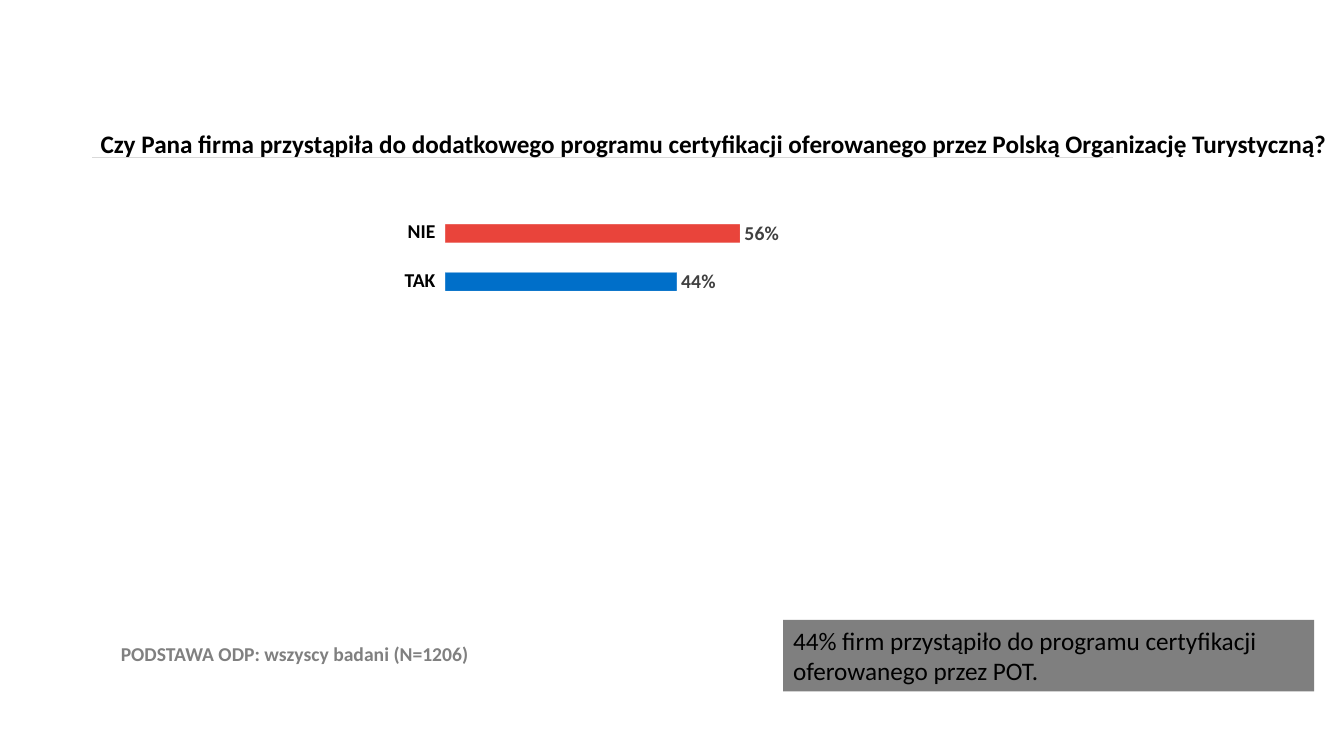
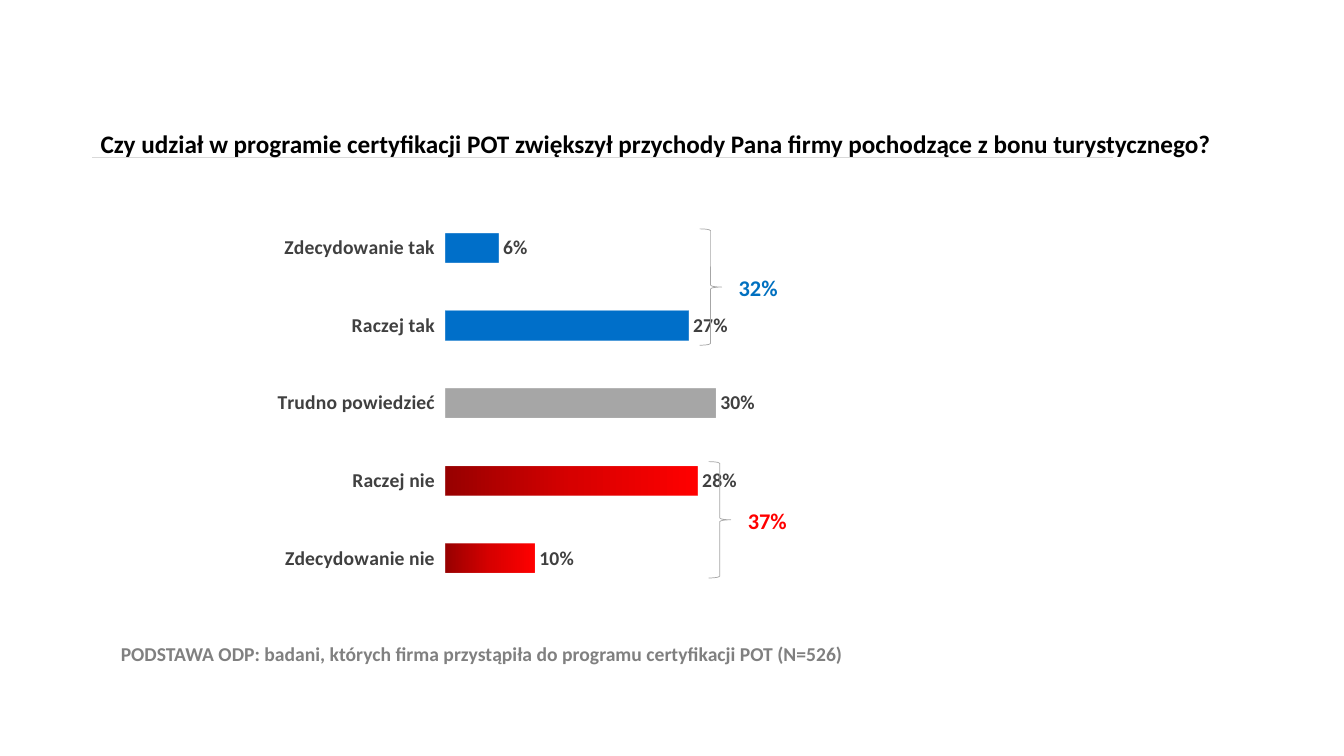
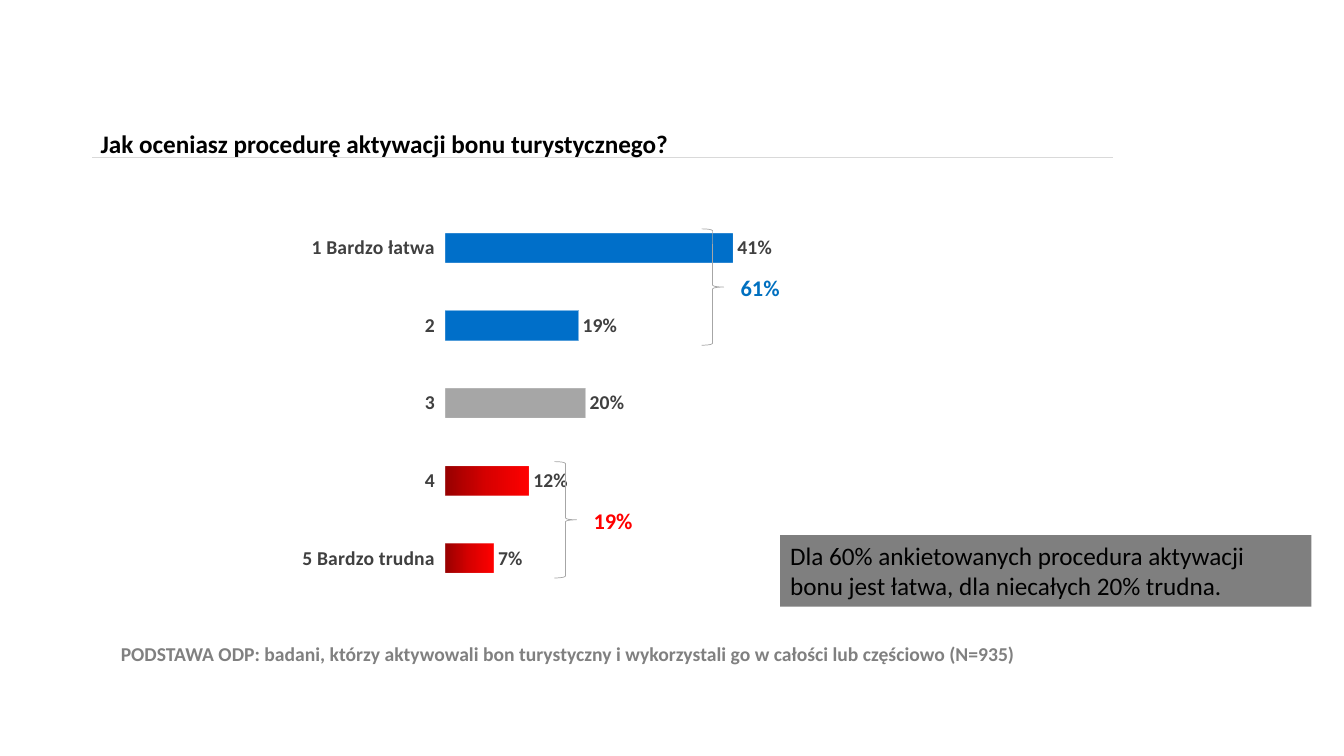
from copy import deepcopy

from lxml import etree
from pptx import Presentation
from pptx.chart.data import CategoryChartData
from pptx.dml.color import RGBColor
from pptx.enum import chart as ch, shapes, text
from pptx.oxml.ns import qn
from pptx.util import Pt

FONT = "Calibri"
C = {
    "black": "000000", "white": "FFFFFF", "label": "404040", "base": "808080",
    "note": "7F7F7F", "rule": "D9D9D9", "brace": "A6A6A6", "neutral": "A6A6A6",
    "bar_blue": "006FC9", "bar_red": "E9443B", "yes": "0070C0", "no": "FF0000",
    "deep_red": "970000", "mid_red": "D70000",
}
RED_GRADIENT = [(0, "deep_red"), (0.5, "mid_red"), (1, "no")]
SCALE_FILLS = [RED_GRADIENT, RED_GRADIENT, "neutral", "bar_blue", "bar_blue"]

CHART_BOX = (9.4, 123.1, 587.5, 310.3)
PLOT = (0.525, 0.085, 0.385, 0.893)  # x, y, width, height as shares of the chart box
SCALE_ROWS = 5


def rgb(name):
    return RGBColor.from_string(C[name])


def set_font(font, size, color, bold=False):
    font.name, font.size, font.bold = FONT, Pt(size), bold
    font.color.rgb = rgb(color)


def place(box):
    return [Pt(v) for v in box]


def add_text(s, box, words, size, color, bold=True, align=text.PP_ALIGN.LEFT):
    tf = s.shapes.add_textbox(*place(box)).text_frame
    tf.word_wrap = True
    p = tf.paragraphs[0]
    p.text, p.alignment = words, align
    set_font(p.font, size, color, bold)
    return tf


def add_frame(prs, title, base, base_width=570):
    """Start a slide with the rule, the question and the survey base."""
    s = prs.slides.add_slide(prs.slide_layouts[6])
    rule = s.shapes.add_connector(shapes.MSO_CONNECTOR.STRAIGHT,
                                  Pt(66), Pt(112.3), Pt(795), Pt(112.3))
    rule.line.color.rgb, rule.line.width = rgb("rule"), Pt(0.75)
    etree.SubElement(rule._element.spPr, qn("a:effectLst"))
    tf = add_text(s, (64.8, 74.2, 895, 54.7), title, 18, "black")
    tf.vertical_anchor = text.MSO_ANCHOR.MIDDLE
    tf.paragraphs[0].line_spacing = 1.07
    tf.paragraphs[0].space_after = Pt(8)
    add_text(s, (79.2, 455, base_width, 24.5), base, 14, "base")
    return s


def set_plot_area(chart, shares):
    area = chart._chartSpace.find(".//" + qn("c:plotArea"))
    for old in area.findall(qn("c:layout")):
        area.remove(old)
    layout = etree.Element(qn("c:layout"))
    manual = etree.SubElement(layout, qn("c:manualLayout"))
    settings = [("layoutTarget", "inner"), ("xMode", "edge"), ("yMode", "edge"),
                *zip("xywh", shares)]
    for tag, val in settings:
        etree.SubElement(manual, qn("c:" + tag)).set("val", str(val))
    area.insert(0, layout)


def fill_bar(fill, look):
    """Fill with a colour name or with a list of (position, colour name)."""
    if isinstance(look, str):
        fill.solid()
        fill.fore_color.rgb = rgb(look)
        return
    fill.gradient()
    fill.gradient_angle = 0
    first = fill.gradient_stops[0]._gs
    first.addnext(deepcopy(first))
    for stop, (position, name) in zip(fill.gradient_stops, look):
        stop.position, stop.color.rgb = position, rgb(name)


def outline_bar(line):
    line.color.rgb, line.width = rgb("white"), Pt(0.75)
    for clr in line._ln.iter(qn("a:srgbClr")):
        etree.SubElement(clr, qn("a:alpha")).set("val", "50000")


def add_bars(s, box, cats, values, fills, top, plot=PLOT):
    data = CategoryChartData(number_format="0%")
    data.categories = cats
    data.add_series("Series 1", values)
    chart = s.shapes.add_chart(ch.XL_CHART_TYPE.BAR_CLUSTERED, *place(box), data).chart
    chart.has_title = chart.has_legend = False
    set_font(chart.font, 10, "black")
    set_plot_area(chart, plot)

    cat_axis, val_axis = chart.category_axis, chart.value_axis
    val_axis.minimum_scale, val_axis.maximum_scale = 0, top
    val_axis.has_major_gridlines = False
    val_axis.major_tick_mark = ch.XL_TICK_MARK.NONE
    val_axis.tick_label_position = ch.XL_TICK_LABEL_POSITION.NONE
    for axis in (cat_axis, val_axis):
        axis.format.line.fill.background()
    set_font(cat_axis.tick_labels.font, 14, "label", True)

    bars = chart.plots[0]
    bars.gap_width, bars.vary_by_categories = 155, False
    bars.has_data_labels = True
    labels = bars.data_labels
    labels.show_value, labels.position = True, ch.XL_LABEL_POSITION.OUTSIDE_END
    labels.number_format, labels.number_format_is_linked = "0%", False
    set_font(labels.font, 14, "label", True)
    fill_bar(bars.series[0].format.fill, "bar_blue")
    for i, look in enumerate(fills):
        fmt = bars.series[0].points[i].format
        fill_bar(fmt.fill, look)
        outline_bar(fmt.line)
    return chart


def add_total(s, box, left, row, total, color):
    """Brace two rows of the chart in the box, from row down, and name their sum."""
    row_height = box[3] * PLOT[3] / SCALE_ROWS
    top = box[1] + box[3] * PLOT[1] + row * row_height + 14
    brace = s.shapes.add_shape(shapes.MSO_SHAPE.RIGHT_BRACE,
                               *place((left, top, 15.8, 1.5 * row_height)))
    brace.shadow.inherit = False
    brace.fill.background()
    brace.line.color.rgb, brace.line.width = rgb("brace"), Pt(0.5)
    brace.adjustments[0], brace.adjustments[1] = 0.083, 0.5
    add_text(s, (left - 12.5, top + 28.8, 108.7, 26.6), total, 16, color,
             align=text.PP_ALIGN.CENTER)


def add_answers(s, box, answers):
    left, top, width, height = box
    table = s.shapes.add_table(len(answers), 1, *place(box)).table
    table.first_row = table.horz_banding = False
    for i, answer in enumerate(answers):
        table.rows[i].height = Pt(height / len(answers))
        cell = table.cell(i, 0)
        cell.fill.background()
        cell.vertical_anchor = text.MSO_ANCHOR.MIDDLE
        cell.margin_left = cell.margin_right = cell.margin_top = Pt(0.72)
        cell.margin_bottom = 0
        p = cell.text_frame.paragraphs[0]
        p.text, p.alignment = answer, text.PP_ALIGN.RIGHT
        set_font(p.font, 14, "black", True)


def add_note(s, left, top, words):
    sp = s.shapes.add_shape(shapes.MSO_SHAPE.RECTANGLE, *place((left, top, 379.4, 51)))
    sp.shadow.inherit = False
    fill_bar(sp.fill, "note")
    sp.line.fill.background()
    tf = sp.text_frame
    tf.word_wrap, tf.vertical_anchor = True, text.MSO_ANCHOR.TOP
    p = tf.paragraphs[0]
    p.text, p.alignment = words, text.PP_ALIGN.LEFT
    set_font(p.font, 18, "black")


def membership_slide(prs):
    s = add_frame(prs, "Czy Pana firma przystąpiła do dodatkowego programu certyfikacji "
                  "oferowanego przez Polską Organizację Turystyczną?",
                  "PODSTAWA ODP: wszyscy badani (N=1206)")
    plot = (*PLOT[:3], 0.223)
    chart = add_bars(s, CHART_BOX, ["1", "2"], [0.56, 0.44],
                     ["bar_red", "bar_blue"], 0.6, plot)
    chart.category_axis.reverse_order = True
    chart.category_axis.visible = False
    add_answers(s, (46, 147.6, 265.7, 70), ["NIE", "TAK"])
    add_note(s, 559.4, 442.8,
             "44% firm przystąpiło do programu certyfikacji oferowanego przez POT.")


def scale_slide(prs, title, base, cats, values, top, totals, base_width=570):
    """Five-step scale; totals are (brace left, first row, sum, colour)."""
    s = add_frame(prs, title, base, base_width)
    add_bars(s, CHART_BOX, cats, values, SCALE_FILLS, top)
    for total in totals:
        add_total(s, CHART_BOX, *total)
    return s


def main():
    prs = Presentation()
    prs.slide_width, prs.slide_height = Pt(960), Pt(540)
    membership_slide(prs)
    scale_slide(
        prs,
        "Czy udział w programie certyfikacji POT zwiększył przychody Pana firmy "
        "pochodzące z bonu turystycznego?",
        "PODSTAWA ODP: badani, których firma przystąpiła do programu certyfikacji POT (N=526)",
        ["Zdecydowanie nie", "Raczej nie", "Trudno powiedzieć", "Raczej tak",
         "Zdecydowanie tak"],
        [0.1, 0.28, 0.3, 0.27, 0.06], 0.35,
        [(499.7, 0, "32%", "yes"), (506.2, 3, "37%", "no")])
    s = scale_slide(
        prs,
        "Jak oceniasz procedurę aktywacji bonu turystycznego?",
        "PODSTAWA ODP: badani, którzy aktywowali bon turystyczny i wykorzystali go "
        "w całości lub częściowo (N=935)",
        ["5 Bardzo trudna", "4", "3", "2", "1 Bardzo łatwa"],
        [0.07, 0.12, 0.2, 0.19, 0.41], 0.45,
        [(501.1, 0, "61%", "yes"), (396, 3, "19%", "no")], base_width=668)
    add_note(s, 557.3, 382.3, "Dla 60% ankietowanych procedura aktywacji bonu jest łatwa, "
             "dla niecałych 20% trudna.")
    prs.save("out.pptx")


if __name__ == "__main__":
    main()
